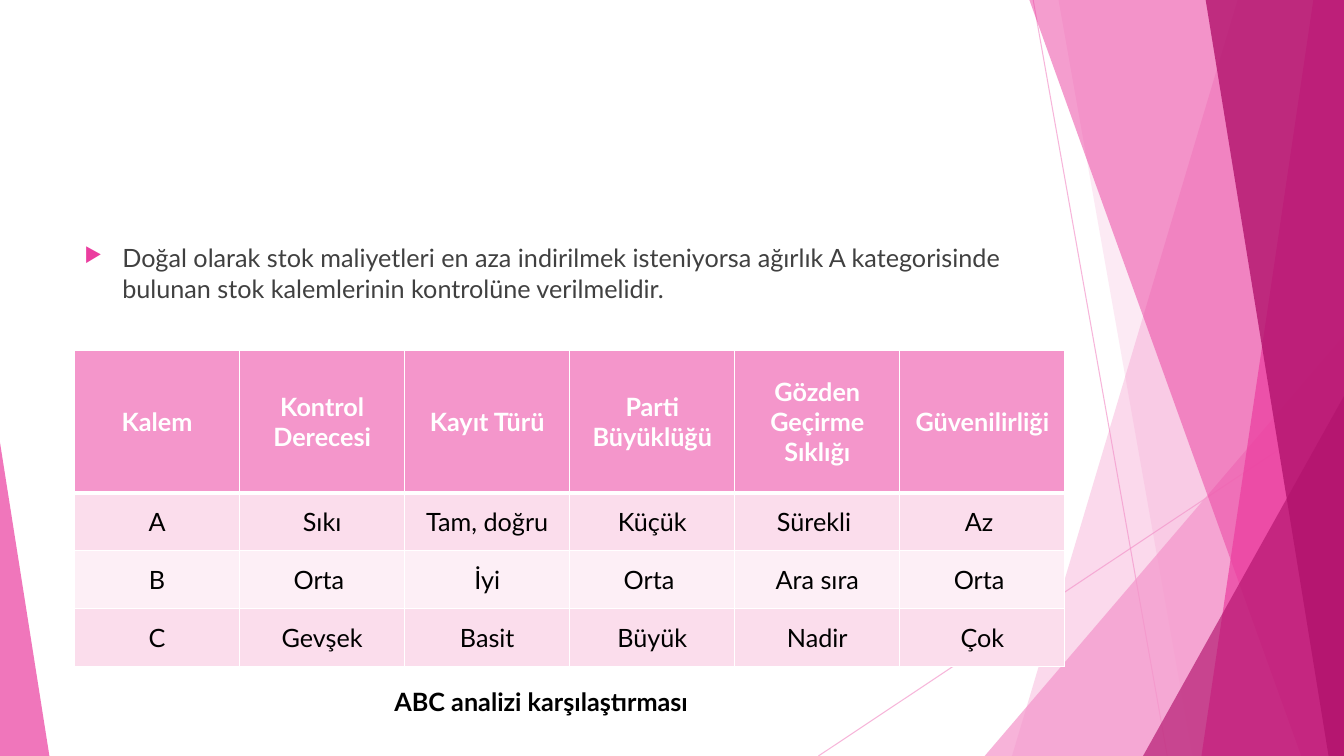
import pptx
import pptx.util
import pptx.oxml
import pptx.oxml.ns
import pptx.dml.color
import pptx.enum.shapes
import pptx.enum.text

Pt = pptx.util.Pt
RGBColor = pptx.dml.color.RGBColor
qn = pptx.oxml.ns.qn
SubElement = pptx.oxml.xmlchemy.OxmlElement

WHITE = RGBColor(0xFF, 0xFF, 0xFF)
BLACK = RGBColor(0x00, 0x00, 0x00)
GREY = RGBColor(0x40, 0x40, 0x40)
PINK = RGBColor(0xF4, 0x96, 0xCB)
MAGENTA = RGBColor(0xEB, 0x3D, 0x9F)
PLUM = RGBColor(0xB2, 0x13, 0x6D)
PALE_PINK = RGBColor(0xFB, 0xDD, 0xEC)
LIGHTEST_PINK = RGBColor(0xFD, 0xEF, 0xF6)

WIDTH, HEIGHT = 960, 540
BLEED = -0.6


def set_opacity(fill, color, percent):
    fill.solid()
    fill.fore_color.rgb = color
    alpha = SubElement("a:alpha")
    alpha.set("val", str(percent * 1000))
    fill._xPr.find(qn("a:solidFill"))[0].append(alpha)


def style_paragraph(para, color, bold=False, align=pptx.enum.text.PP_ALIGN.CENTER):
    para.alignment = align
    for span in para.runs:
        span.font.name = "Lato"
        span.font.size = Pt(18)
        span.font.bold = bold
        span.font.color.rgb = color


deck = pptx.Presentation()
deck.slide_width, deck.slide_height = Pt(WIDTH), Pt(HEIGHT)
page = deck.slides.add_slide(deck.slide_layouts[6])

for x1, y1, x2, y2 in [(738, 0, 833.8, HEIGHT), (WIDTH, 290.2, 584.6, HEIGHT)]:
    line = page.shapes.add_connector(
        pptx.enum.shapes.MSO_CONNECTOR.STRAIGHT, Pt(x1), Pt(y1), Pt(x2), Pt(y2))
    line.line.width = Pt(0.75)
    set_opacity(line.line.fill, PINK, 70)
    line._element.spPr.append(SubElement("a:effectLst"))

facets = [
    ("band", (884.2, 722.9), PINK, 36),
    ("band", (756, 851.8), PINK, 20),
    ("triangle", (703.4, 239.8, 256.6, 1), PINK, 72),
    ("band", (735.1, 929.5), MAGENTA, 50),
    ("band", (938.2, 858.2), MAGENTA, 70),
    ("band", (861.1, 949), PLUM, 80),
    ("triangle", (816.5, 283, 143.5, 1), PLUM, 66),
    ("triangle", (0, 316.1, 35.3, 0), MAGENTA, 70),
]
for kind, place, color, opacity in facets:
    if kind == "band":
        top_x, bottom_x = place
        outline = page.shapes.build_freeform(Pt(top_x), Pt(BLEED))
        outline.add_line_segments(
            [(Pt(WIDTH), Pt(BLEED)), (Pt(WIDTH), Pt(HEIGHT)), (Pt(bottom_x), Pt(HEIGHT))])
        facet = outline.convert_to_shape()
    else:
        left, top, width, apex = place
        facet = page.shapes.add_shape(
            pptx.enum.shapes.MSO_SHAPE.ISOSCELES_TRIANGLE,
            Pt(left), Pt(top), Pt(width), Pt(HEIGHT - top))
        facet.adjustments[0] = apex
    facet.shadow.inherit = False
    facet.line.fill.background()
    set_opacity(facet.fill, color, opacity)

body = page.shapes.add_textbox(Pt(53.3), Pt(169.9), Pt(676.8), Pt(305.3))
body.text_frame.word_wrap = True
para = body.text_frame.paragraphs[0]
para.text = ("Doğal olarak stok maliyetleri en aza indirilmek isteniyorsa ağırlık "
             "A kategorisinde bulunan stok kalemlerinin kontrolüne verilmelidir.")
para.space_before = Pt(10)
style_paragraph(para, GREY, align=pptx.enum.text.PP_ALIGN.LEFT)
properties = para._p.get_or_add_pPr()
properties.set("marL", str(Pt(27)))
properties.set("indent", str(Pt(-27)))
bullet_color = SubElement("a:buClr")
swatch = SubElement("a:srgbClr")
swatch.set("val", str(MAGENTA))
bullet_color.append(swatch)
bullet_size = SubElement("a:buSzPct")
bullet_size.set("val", "80000")
bullet = SubElement("a:buChar")
bullet.set("char", "▶")
properties.extend([bullet_color, bullet_size, bullet])

rows = [
    ["Kalem", "Kontrol Derecesi", "Kayıt Türü", "Parti Büyüklüğü",
     "Gözden Geçirme Sıklığı", "Güvenilirliği"],
    ["A", "Sıkı", "Tam, doğru", "Küçük", "Sürekli ", "Az "],
    ["B", "Orta ", "İyi", "Orta ", "Ara sıra", "Orta "],
    ["C", "Gevşek", "Basit", "Büyük", "Nadir", "Çok"],
]
row_heights = [101.5, 41.3, 41.3, 41.3]
row_fills = [PINK, PALE_PINK, LIGHTEST_PINK, PALE_PINK]
table = page.shapes.add_table(
    len(rows), len(rows[0]), Pt(53.3), Pt(250.6), Pt(707.4), Pt(sum(row_heights))).table
for column in table.columns:
    column.width = Pt(117.9)
for r, texts in enumerate(rows):
    table.rows[r].height = Pt(row_heights[r])
    for c, text in enumerate(texts):
        cell = table.cell(r, c)
        cell.text_frame.text = text
        cell.vertical_anchor = pptx.enum.text.MSO_ANCHOR.MIDDLE
        style_paragraph(cell.text_frame.paragraphs[0], WHITE if r == 0 else BLACK, r == 0)
        for side in "LRTB":
            under_header = (r, side) in [(0, "B"), (1, "T")]
            border = SubElement("a:ln" + side)
            border.set("w", str(Pt(3 if under_header else 1)))
            border_fill = SubElement("a:solidFill")
            border_color = SubElement("a:srgbClr")
            border_color.set("val", str(WHITE))
            border_fill.append(border_color)
            border.append(border_fill)
            cell._tc.get_or_add_tcPr().append(border)
        cell.fill.solid()
        cell.fill.fore_color.rgb = row_fills[r]

caption = page.shapes.add_textbox(Pt(216.7), Pt(486.7), Pt(339.8), Pt(29))
caption.text_frame.word_wrap = True
caption.text_frame.text = "ABC analizi karşılaştırması"
style_paragraph(caption.text_frame.paragraphs[0], BLACK, True)

deck.save("out.pptx")
